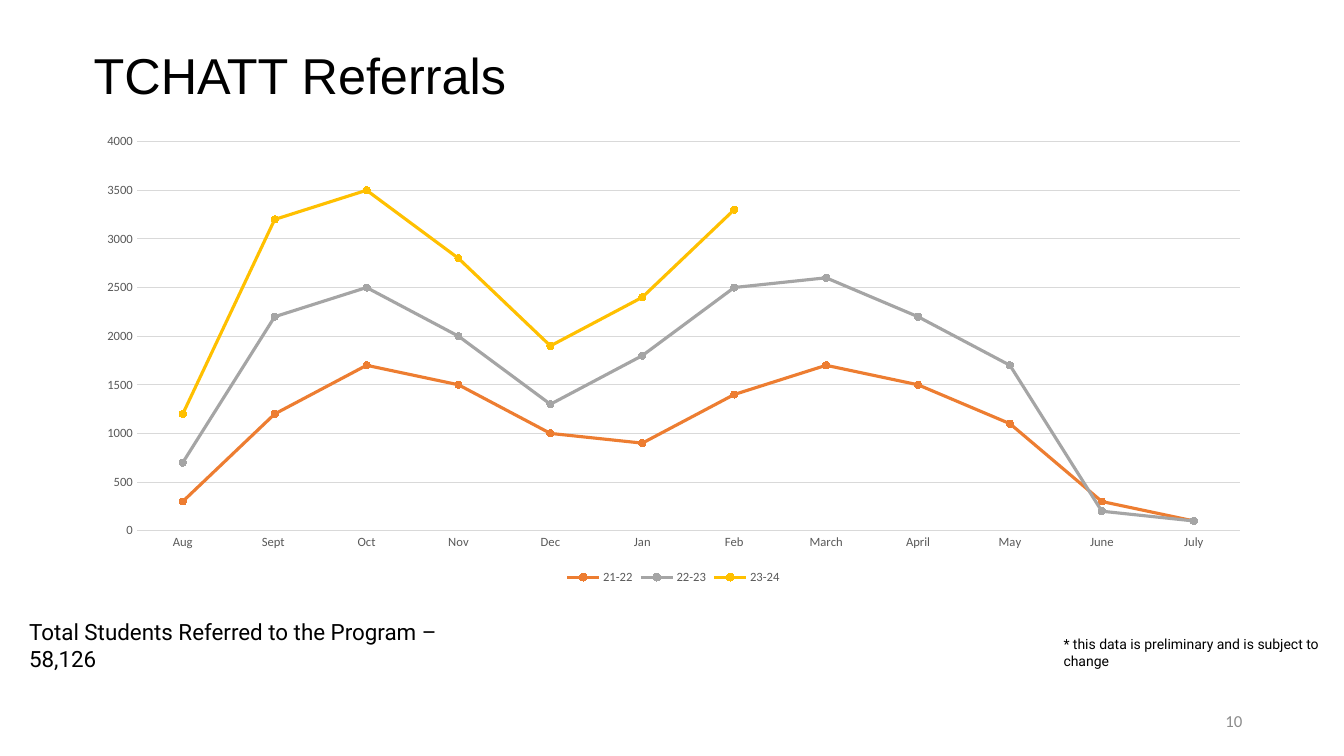
from pptx import Presentation
from pptx.chart.data import CategoryChartData
from pptx.dml.color import RGBColor
from pptx.enum.chart import XL_CHART_TYPE as ChartType, XL_LEGEND_POSITION as LegendPosition
from pptx.enum.chart import XL_MARKER_STYLE as MarkerStyle, XL_TICK_MARK as TickMark
from pptx.enum.text import MSO_ANCHOR as Anchor, PP_ALIGN as Align
from pptx.util import Inches, Pt

COLORS = {
    "text": "000000",
    "page": "8C8C8C",
    "axis": "595959",
    "grid": "D9D9D9",
    "21-22": "ED7D31",
    "22-23": "A5A5A5",
    "23-24": "FFC000",
}
TEXTS = [
    ("10", (9.42, 6.95, 3, 0.4), "Calibri", 12, "page", Align.RIGHT, Anchor.MIDDLE),
    ("TCHATT Referrals", (0.83, 0.39, 10.58, 0.71), "Arial", 36, "text", Align.LEFT, Anchor.TOP),
    ("Total Students Referred to the Program – 58,126", (0.19, 6.08, 4.52, 0.37),
     "Roboto", 16, "text", Align.LEFT, Anchor.TOP),
    ("* this data is preliminary and is subject to change", (10.45, 6.26, 3, 0.27),
     "Roboto", 10, "text", Align.LEFT, Anchor.TOP),
]
MONTHS = ["Aug", "Sept ", "Oct", "Nov", "Dec", "Jan", "Feb", "March", "April", "May", "June", "July"]
REFERRALS = {
    "21-22": [300, 1200, 1700, 1500, 1000, 900, 1400, 1700, 1500, 1100, 300, 100],
    "22-23": [700, 2200, 2500, 2000, 1300, 1800, 2500, 2600, 2200, 1700, 200, 100],
    "23-24": [1200, 3200, 3500, 2800, 1900, 2400, 3300] + [None] * 5,
}
CHART_BOX = (0.83, 1.24, 11.7, 4.6)


def color(name):
    return RGBColor.from_string(COLORS[name])


def set_font(font, face, size, name):
    font.name = face
    font.size = Pt(size)
    font.color.rgb = color(name)


def set_line(line, name, width):
    line.color.rgb = color(name)
    line.width = Pt(width)


def add_text(slide, words, box, face, size, name, align, anchor):
    frame = slide.shapes.add_textbox(*map(Inches, box)).text_frame
    frame.word_wrap = True
    frame.vertical_anchor = anchor
    paragraph = frame.paragraphs[0]
    paragraph.alignment = align
    run = paragraph.add_run()
    run.text = words
    set_font(run.font, face, size, name)


def add_referrals(slide):
    data = CategoryChartData()
    data.categories = MONTHS
    for year, counts in REFERRALS.items():
        data.add_series(year, counts)
    chart = slide.shapes.add_chart(ChartType.LINE_MARKERS, *map(Inches, CHART_BOX), data).chart
    chart.has_title = False
    set_font(chart.font, "Calibri", 10, "text")

    chart.has_legend = True
    chart.legend.position = LegendPosition.BOTTOM
    chart.legend.include_in_layout = False
    set_font(chart.legend.font, "Calibri", 9, "axis")

    months, counts = chart.category_axis, chart.value_axis
    for axis in (months, counts):
        axis.major_tick_mark = axis.minor_tick_mark = TickMark.NONE
        set_font(axis.tick_labels.font, "Calibri", 9, "axis")
    set_line(months.format.line, "grid", 0.75)
    counts.format.line.fill.background()
    counts.minimum_scale, counts.maximum_scale, counts.major_unit = 0, 4000, 500
    counts.has_major_gridlines = True
    set_line(counts.major_gridlines.format.line, "grid", 0.75)

    plot = chart.plots[0]
    plot.vary_by_categories = False
    for year in plot.series:
        year.smooth = False
        set_line(year.format.line, year.name, 2.25)
        year.marker.style = MarkerStyle.CIRCLE
        year.marker.size = 5
        year.marker.format.fill.solid()
        year.marker.format.fill.fore_color.rgb = color(year.name)
        set_line(year.marker.format.line, year.name, 0.75)


def main():
    deck = Presentation()
    deck.slide_width, deck.slide_height = Inches(13.33), Inches(7.5)
    slide = deck.slides.add_slide(deck.slide_layouts[6])
    for text in TEXTS:
        add_text(slide, *text)
    add_referrals(slide)
    deck.save("out.pptx")


if __name__ == "__main__":
    main()
